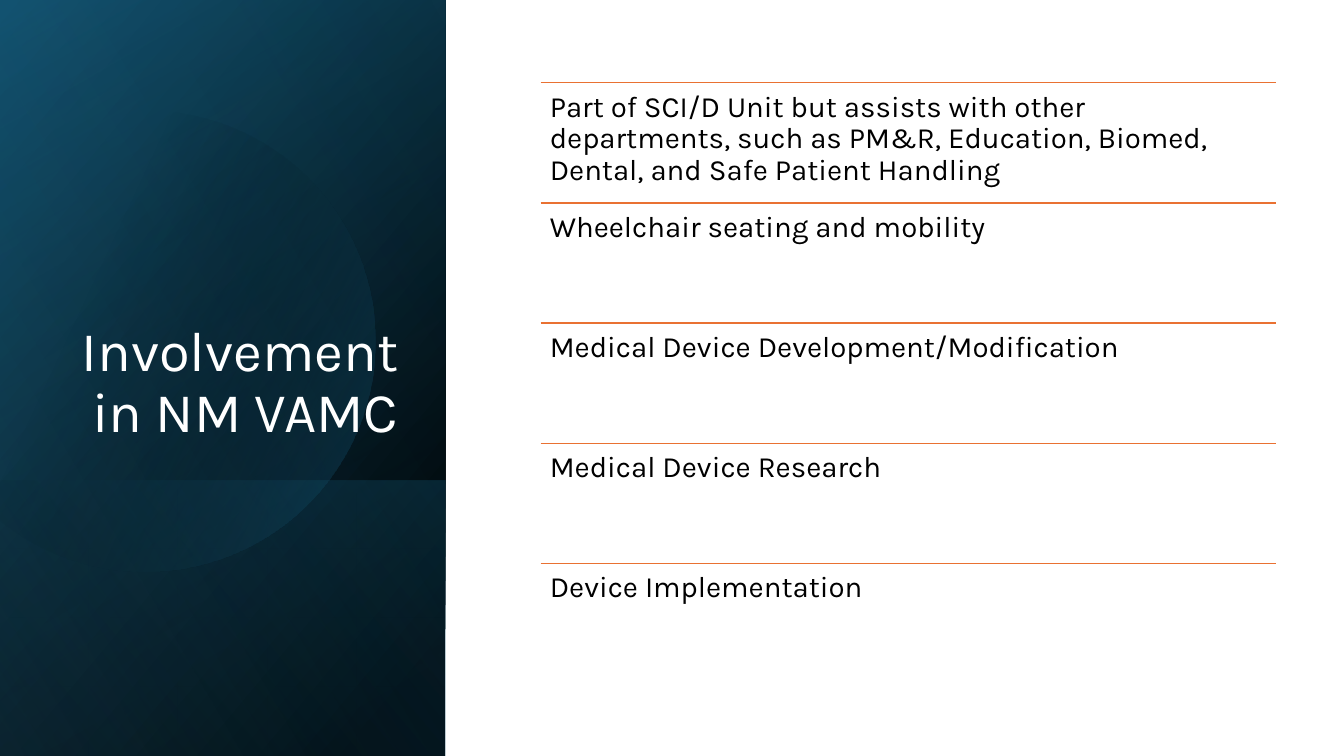
import math
from dataclasses import dataclass

from lxml import etree
from pptx import Presentation
from pptx import util as u
from pptx.dml.color import RGBColor
from pptx.enum import shapes, text
from pptx.oxml import ns

HUES = {"black": "000000", "navy": "104862", "teal": "156082",
        "sky": "46B1E1", "white": "FFFFFF", "rust": "E97132"}
FONT = "Karla"

deck = Presentation()
deck.slide_width, deck.slide_height = u.Inches(13.33), u.Inches(7.5)
slide = deck.slides.add_slide(deck.slide_layouts[6])
COL, ROW = deck.slide_width / 100, deck.slide_height / 100


@dataclass
class Stop:
    pos: int
    hue: str
    alpha: int = 100


@dataclass
class Panel:
    top: float
    rows: float
    angle: int
    stops: tuple[Stop, Stop]


@dataclass
class Label:
    words: str
    left: float
    top: float
    cols: float
    rows: float
    size: int
    hue: str
    frame: dict
    para: dict


def apply(thing: object, values: dict) -> None:
    for key, value in values.items():
        setattr(thing, key, value)


def blend(shape, angle: float, stops: tuple[Stop, ...]) -> None:
    shape.shadow.inherit = False
    shape.line.fill.background()
    shape.fill.background()
    props = shape.fill._xPr
    grad = etree.Element(ns.qn("a:gradFill"), rotWithShape="1")
    group = etree.SubElement(grad, ns.qn("a:gsLst"))
    for stop in stops:
        mark = etree.SubElement(group, ns.qn("a:gs"), pos=str(stop.pos * 1000))
        tint = etree.SubElement(mark, ns.qn("a:srgbClr"), val=HUES[stop.hue])
        etree.SubElement(tint, ns.qn("a:alpha"), val=str(stop.alpha * 1000))
    etree.SubElement(grad, ns.qn("a:lin"), ang=str(angle * 60000), scaled="0")
    props.replace(props.find(ns.qn("a:noFill")), grad)


def draw_panel(panel: Panel) -> None:
    wide, high = SIDE * COL, panel.rows * ROW
    left = (wide - high) / 2
    top = panel.top * ROW + (high - wide) / 2
    shape = slide.shapes.add_shape(shapes.MSO_SHAPE.RECTANGLE,
                                   *map(round, (left, top, high, wide)))
    shape.rotation = 90
    shape._element.spPr.xfrm.set("flipH", "1")
    blend(shape, panel.angle, panel.stops)


def draw_disc(col: float, row: float, rows: float) -> None:
    mid, high, reach = col * COL, row * ROW, rows * ROW
    limit = math.acos(-mid / reach)
    turns = [limit * (step / 60 - 1) for step in range(121)]
    points = [(round(mid + reach * math.cos(turn)),
               round(high + reach * math.sin(turn))) for turn in turns]
    outline = slide.shapes.build_freeform(*points[0])
    outline.add_line_segments(points[1:], close=True)
    blend(outline.convert_to_shape(), 25,
          (Stop(29, "black", 0), Stop(100, "teal", 43)))


def draw_label(label: Label) -> None:
    box = slide.shapes.add_textbox(
        round(label.left * COL), round(label.top * ROW),
        round(label.cols * COL), round(label.rows * ROW))
    apply(box.text_frame, {"word_wrap": True, **label.frame})
    para = box.text_frame.paragraphs[0]
    apply(para, {"line_spacing": 0.9, **label.para})
    run = para.add_run()
    run.text = label.words
    apply(run.font, {"name": FONT, "size": u.Pt(label.size)})
    run.font.color.rgb = RGBColor.from_string(HUES[label.hue])


def draw_rule(left: float, top: float, cols: float) -> None:
    high = round(top * ROW)
    rule = slide.shapes.add_connector(
        shapes.MSO_CONNECTOR.STRAIGHT, round(left * COL), high,
        round((left + cols) * COL), high)
    rule.line.width = u.Pt(1)
    rule.line.color.rgb = RGBColor.from_string(HUES["rust"])
    etree.SubElement(rule._element.spPr, ns.qn("a:effectLst"))


SIDE = 33.15
PANELS = (
    Panel(0, 100, 50, (Stop(8, "black"), Stop(100, "navy"))),
    Panel(0, 100, 30, (Stop(0, "black", 0), Stop(99, "teal", 46))),
    Panel(63.5, 36.5, 130, (Stop(2, "teal", 29), Stop(100, "black", 30))),
)
GLOW = Panel(0, 100, 120, (Stop(0, "black", 0), Stop(99, "sky", 11)))
TITLE = Label("Involvement in NM VAMC", 4.8, 24.53, 25.58, 34.93, 40, "white",
              {"vertical_anchor": text.MSO_ANCHOR.BOTTOM},
              {"alignment": text.PP_ALIGN.RIGHT})
ITEMS = (
    "Part of SCI/D Unit but assists with other departments, such as PM&R, "
    "Education, Biomed, Dental, and Safe Patient Handling",
    "Wheelchair seating and mobility",
    "Medical Device Development/Modification",
    "Medical Device Research",
    "Device Implementation",
)
LEFT, TOP, WIDE, STEP = 40.23, 10.93, 54.72, 15.9
INSET = {f"margin_{edge}": u.Inches(0.09)
         for edge in ("left", "top", "right", "bottom")}

for panel in PANELS:
    draw_panel(panel)
draw_disc(10.76, 45.1, 30.5)
draw_panel(GLOW)
draw_label(TITLE)
for order, words in enumerate(ITEMS):
    top = TOP + order * STEP
    draw_rule(LEFT, top, WIDE)
    draw_label(Label(words, LEFT, top, WIDE, STEP, 21, "black", INSET,
                     {"space_after": u.Pt(7)}))

deck.save("out.pptx")
